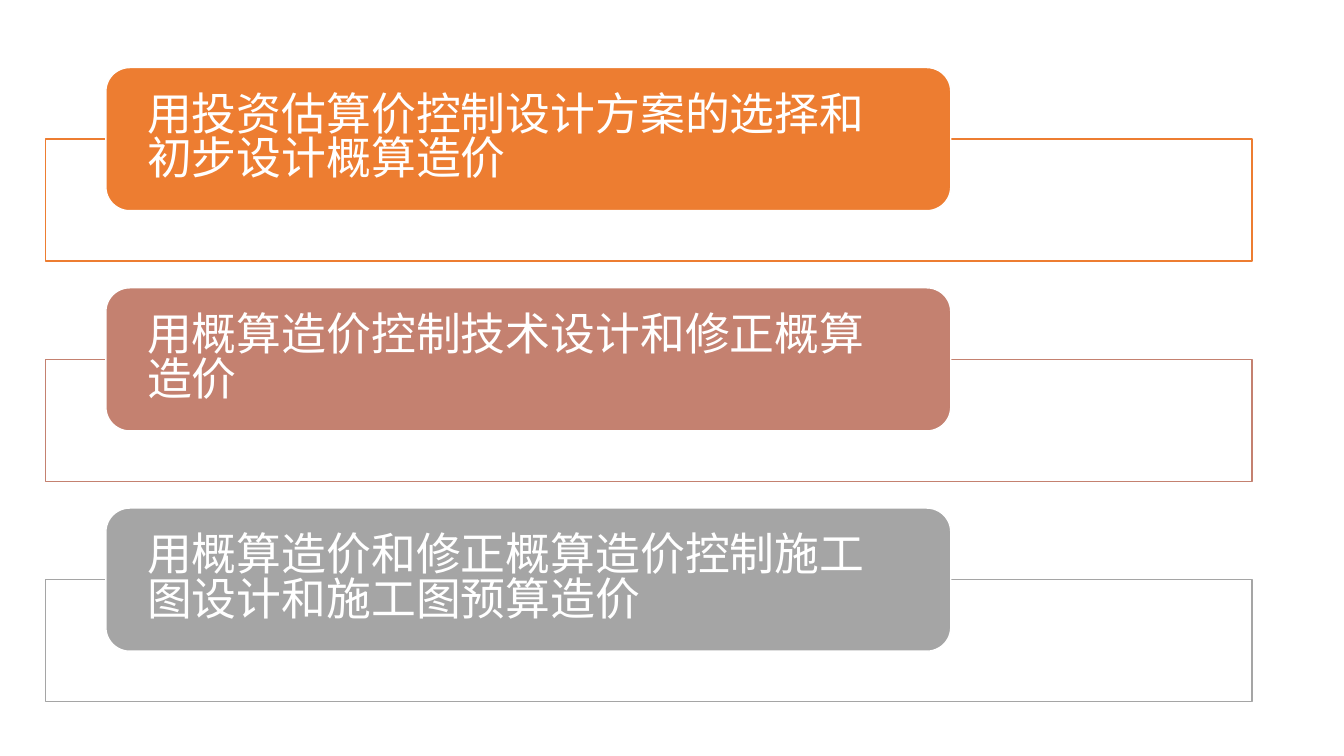
from lxml import etree
from pptx import Presentation
from pptx.dml.color import RGBColor
from pptx.enum.shapes import MSO_SHAPE
from pptx.enum.text import MSO_ANCHOR, PP_ALIGN
from pptx.oxml.ns import qn
from pptx.util import Inches, Pt

RECTANGLE = MSO_SHAPE.RECTANGLE
ROUNDED = MSO_SHAPE.ROUNDED_RECTANGLE
MIDDLE = MSO_ANCHOR.MIDDLE
LEFT = PP_ALIGN.LEFT

COLORS = {"white": "FFFFFF", "orange": "ED7D31", "rose": "C48170", "gray": "A5A5A5"}
STAGES = [
    ("orange", "用投资估算价控制设计方案的选择和初步设计概算造价"),
    ("rose", "用概算造价控制技术设计和修正概算造价"),
    ("gray", "用概算造价和修正概算造价控制施工图设计和施工图预算造价"),
]
FIRST_TOP = 0.67
STAGE_PITCH = 2.185
FRAME_DROP = 0.71


class StagePage:
    font = "Noto Sans CJK JP"
    size = Pt(32)

    def __init__(self, page):
        self.page = page

    def color(self, name):
        return RGBColor.from_string(COLORS[name])

    def shape(self, kind, left, top, width, height, fill, line):
        box = self.page.shapes.add_shape(
            kind, Inches(left), Inches(top), Inches(width), Inches(height))
        box.shadow.inherit = False
        box.fill.solid()
        box.fill.fore_color.rgb = self.color(fill)
        box.line.color.rgb = self.color(line)
        box.line.width = Pt(1)
        return box

    def frame(self, top, line):
        box = self.shape(RECTANGLE, 0.45, top, 11.97, 1.21, "white", line)
        fill_color = box.fill._xPr.find(qn("a:solidFill"))[0]
        etree.SubElement(fill_color, qn("a:alpha"), val="90000")

    def label(self, top, fill, text):
        box = self.shape(ROUNDED, 1.05, top, 8.38, 1.42, fill, "white")
        box.adjustments[0] = 0.1667
        frame = box.text_frame
        frame.word_wrap = True
        frame.vertical_anchor = MIDDLE
        frame.margin_left = frame.margin_right = Inches(0.34)
        frame.margin_top = frame.margin_bottom = Inches(0)
        frame.text = text
        para = frame.paragraphs[0]
        para.alignment = LEFT
        para.line_spacing = 0.83
        span = para.runs[0]
        span.font.name = self.font
        span.font.size = self.size
        span.font.color.rgb = self.color("white")
        etree.SubElement(span.font._element, qn("a:ea"), typeface=self.font)


def main():
    deck = Presentation()
    deck.slide_width = Inches(13.33)
    deck.slide_height = Inches(7.5)
    page = StagePage(deck.slides.add_slide(deck.slide_layouts[6]))
    for index, (color, text) in enumerate(STAGES):
        top = FIRST_TOP + index * STAGE_PITCH
        page.frame(top + FRAME_DROP, color)
        page.label(top, color, text)
    deck.save("out.pptx")


if __name__ == "__main__":
    main()
